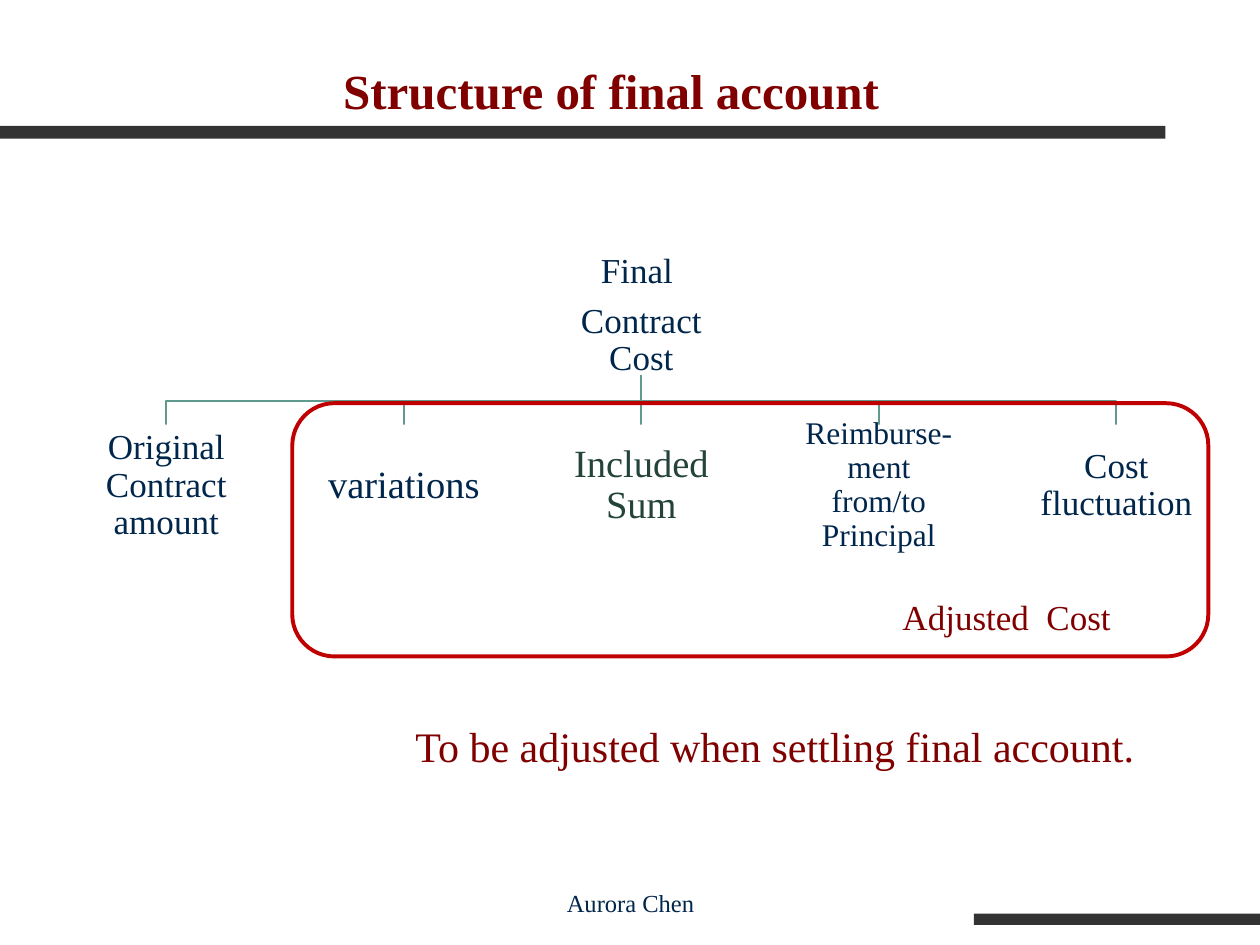
from lxml import etree
from pptx import Presentation
from pptx.dml.color import RGBColor
from pptx.enum.shapes import MSO_CONNECTOR, MSO_SHAPE
from pptx.enum.text import MSO_ANCHOR, PP_ALIGN
from pptx.oxml.ns import qn
from pptx.util import Inches, Pt

RECTANGLE = MSO_SHAPE.RECTANGLE
ROUNDED = MSO_SHAPE.ROUNDED_RECTANGLE
STRAIGHT = MSO_CONNECTOR.STRAIGHT
TOP, MIDDLE, BOTTOM = MSO_ANCHOR.TOP, MSO_ANCHOR.MIDDLE, MSO_ANCHOR.BOTTOM
CENTER = PP_ALIGN.CENTER

WHITE = RGBColor(0xFF, 0xFF, 0xFF)
CHARCOAL = RGBColor(0x33, 0x33, 0x33)
NAVY = RGBColor(0x00, 0x26, 0x4C)
GREEN = RGBColor(0x24, 0x43, 0x3B)
TEAL = RGBColor(0x60, 0x9A, 0x8F)
RED = RGBColor(0xC0, 0x00, 0x00)
MAROON = RGBColor(0x80, 0x00, 0x00)
FONT = "Times New Roman"

BARS = [(0, 1, 9.25, 0.1), (7.73, 7.25, 2.27, 0.09)]
ROOT = ("Final \nContract Cost", 20, NAVY, 0.08)
BRANCHES = [
    ("Original Contract amount", 20, NAVY, 0.08),
    ("variations", 22, NAVY, 0.09),
    ("Included Sum", 22, GREEN, 0.09),
    ("Reimburse-ment from/to Principal", 18, NAVY, 0.07),
    ("Cost fluctuation", 20, NAVY, 0.08),
]
LABELS = [
    ("Structure of final account", (0, 0.31, 9.7, 0.69), dict(size=28, color=MAROON, bold=True, anchor=BOTTOM)),
    ("Adjusted  Cost", (6.65, 4.68, 2.68, 0.32), dict(size=20, color=MAROON)),
    ("To be adjusted when settling final account.", (2.6, 5.67, 7.1, 0.37), dict(size=24, color=MAROON)),
    ("Aurora Chen", (3.42, 6.83, 3.17, 0.5), dict(size=14, color=NAVY, anchor=BOTTOM)),
]
ADJUSTED_FRAME = (2.32, 3.2, 7.27, 2.01)

NODE_WIDTH, NODE_HEIGHT = 1.45, 0.97
FIRST_CENTER, PITCH = 1.32, 1.885
ROOT_TOP, BRANCH_TOP = 2.02, 3.37
ROOT_BOTTOM, BUS = 2.98, 3.18
ROOT_CENTER = FIRST_CENTER + PITCH * (len(BRANCHES) // 2)


def write_text(shape, text, size, color, bold=False, anchor=TOP, inset=None, spacing=None, after=0):
    frame = shape.text_frame
    frame.word_wrap = True
    frame.vertical_anchor = anchor
    if inset is not None:
        frame.margin_left = frame.margin_right = Inches(inset)
        frame.margin_top = frame.margin_bottom = Inches(inset)
    frame.text = text
    for para in frame.paragraphs:
        para.alignment = CENTER
        para.line_spacing = spacing
        para.space_after = Pt(after)
        for span in para.runs:
            span.font.name = FONT
            span.font.size = Pt(size)
            span.font.bold = bold
            span.font.color.rgb = color


def add_block(page, kind, place, fill=None, line=None):
    block = page.shapes.add_shape(kind, *map(Inches, place))
    block.shadow.inherit = False
    if fill is None:
        block.fill.background()
    else:
        block.fill.solid()
        block.fill.fore_color.rgb = fill
    if line is None:
        block.line.fill.background()
    else:
        block.line.color.rgb = line
        block.line.width = Pt(2.25)
    return block


def add_node(page, center, top, content):
    text, size, color, inset = content
    place = (center - NODE_WIDTH / 2, top, NODE_WIDTH, NODE_HEIGHT)
    node = add_block(page, ROUNDED, place, fill=WHITE)
    node.adjustments[0] = 0.1
    write_text(node, text, size, color, anchor=MIDDLE, inset=inset, spacing=0.9, after=size * 0.35)


def add_branch_line(page, center):
    start = (Inches(ROOT_CENTER), Inches(ROOT_BOTTOM))
    end = (Inches(center), Inches(BRANCH_TOP))
    if center == ROOT_CENTER:
        link = page.shapes.add_connector(STRAIGHT, *start, *end)
        etree.SubElement(link._element.spPr, qn("a:effectLst"))
    else:
        builder = page.shapes.build_freeform(*start)
        corners = [(start[0], Inches(BUS)), (end[0], Inches(BUS)), end]
        builder.add_line_segments(corners, close=False)
        link = builder.convert_to_shape()
        link.shadow.inherit = False
        link.fill.background()
    link.line.color.rgb = TEAL
    link.line.width = Pt(1)


def main():
    deck = Presentation()
    deck.slide_width, deck.slide_height = Inches(10), Inches(7.5)
    page = deck.slides.add_slide(deck.slide_layouts[6])

    for place in BARS:
        add_block(page, RECTANGLE, place, fill=CHARCOAL)

    add_node(page, ROOT_CENTER, ROOT_TOP, ROOT)
    for index, content in enumerate(BRANCHES):
        center = FIRST_CENTER + PITCH * index
        add_branch_line(page, center)
        add_node(page, center, BRANCH_TOP, content)

    add_block(page, ROUNDED, ADJUSTED_FRAME, line=RED)
    for text, place, style in LABELS:
        box = page.shapes.add_textbox(*map(Inches, place))
        write_text(box, text, **style)

    deck.save("out.pptx")


if __name__ == "__main__":
    main()
